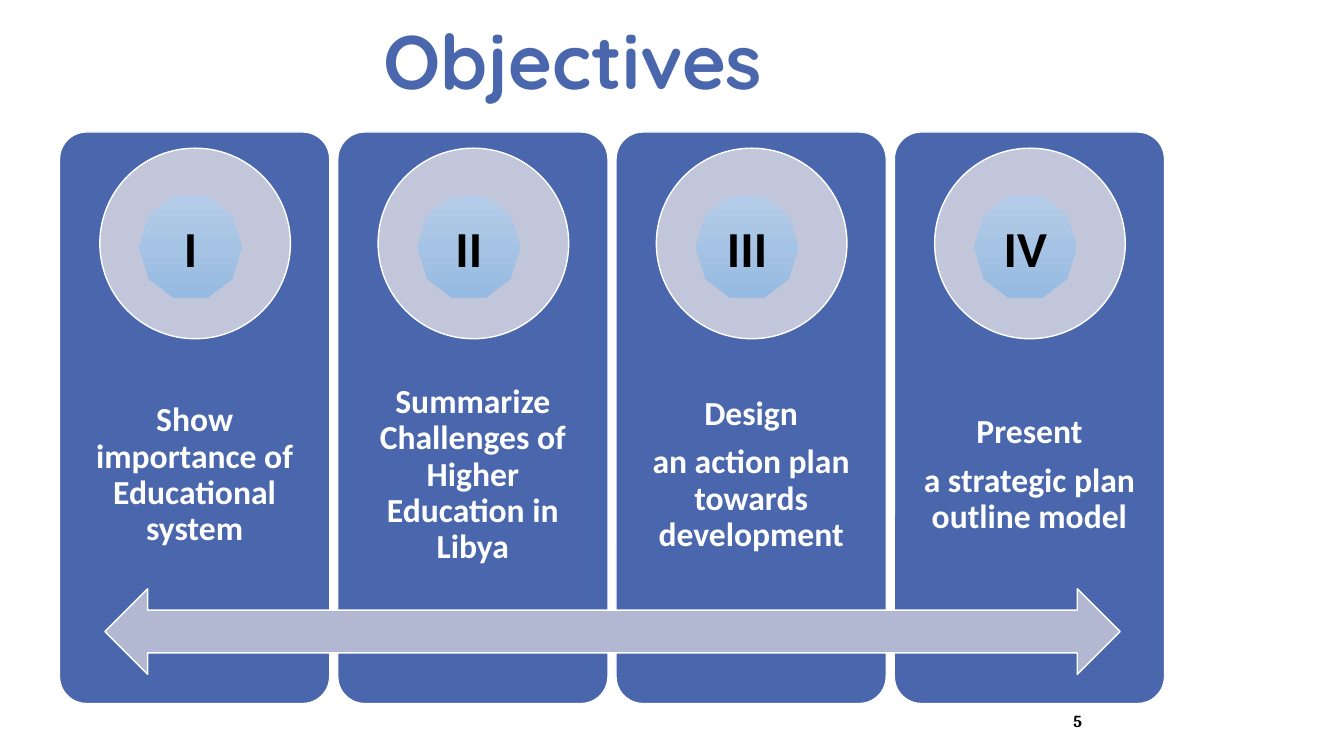
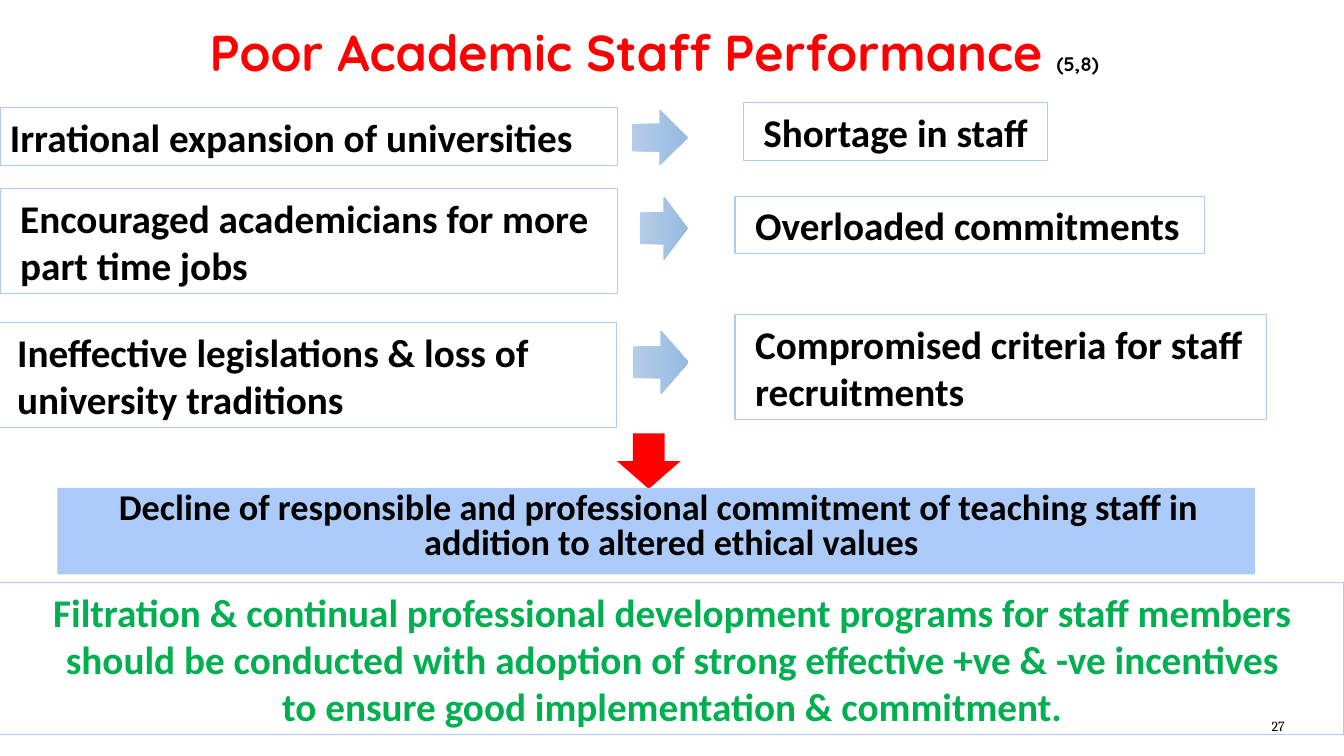
import dataclasses
import typing

import lxml.etree
import pptx
import pptx.dml.color
import pptx.enum.shapes
import pptx.enum.text
import pptx.oxml.ns
import pptx.shapes.autoshape
import pptx.slide
import pptx.text.text
import pptx.util

Inches = pptx.util.Inches
Pt = pptx.util.Pt
Kind = pptx.enum.shapes.MSO_SHAPE
Align = pptx.enum.text.PP_ALIGN
Anchor = pptx.enum.text.MSO_ANCHOR
Shape = pptx.shapes.autoshape.Shape
Slide = pptx.slide.Slide
Para = pptx.text.text._Paragraph

BLUE, PALE, RED, GREEN = "4A66AC", "ACCBF9", "FF0000", "00B050"
BLACK, WHITE = "000000", "FFFFFF"
DISC, BAR = "C1C6DB", "B2B8D2"
SHADE = ("B4CCE7", "96BAE1")
BODY, HEAD, FOOT = "Calibri", "Quicksand", "Cambria"


class Box(typing.NamedTuple):
    x: float
    y: float
    w: float
    h: float


@dataclasses.dataclass
class Goal:
    mark: str
    lines: list[str]


@dataclasses.dataclass
class Note:
    box: Box
    text: str
    inset: float = 0.2
    hang: float = 0  # bullet indent; 0 means no bullet


@dataclasses.dataclass
class Arrow:
    box: Box
    turn: int = 270
    fill: str | tuple[str, str] = SHADE


GOALS = [
    Goal("I", ["Show importance of Educational system"]),
    Goal("II", ["Summarize Challenges of Higher Education in Libya"]),
    Goal("III", ["Design", "an action plan towards development"]),
    Goal("IV", ["Present", "a strategic plan outline model"]),
]
NOTES = [
    Note(Box(0, 1.07, 6.12, 0.57), "Irrational expansion of universities", 0.1, 0.28),
    Note(Box(0, 1.87, 6.12, 1.04), "Encouraged academicians for more part time jobs"),
    Note(Box(-0.21, 3.2, 6.33, 1.04),
         "Ineffective legislations & loss of university traditions", 0.38, 0.37),
    Note(Box(7.37, 1.02, 3.02, 0.57), "Shortage in staff"),
    Note(Box(7.29, 1.95, 4.66, 0.57), "Overloaded commitments"),
    Note(Box(7.29, 3.12, 5.27, 1.04), "Compromised criteria for staff recruitments"),
]
ARROWS = [
    Arrow(Box(6.27, 1.09, 0.55, 0.55)),
    Arrow(Box(6.27, 2.03, 0.63, 0.47)),
    Arrow(Box(6.24, 3.32, 0.63, 0.55)),
    Arrow(Box(6.12, 4.3, 0.63, 0.55), 0, RED),
]


def tint(code: str) -> pptx.dml.color.RGBColor:
    return pptx.dml.color.RGBColor.from_string(code)


def place(box: Box) -> list[pptx.util.Length]:
    return [Inches(side) for side in box]


def draw(slide: Slide, kind: Kind, box: Box,
         fill: str | tuple[str, str] | None = None,
         line: str | None = None, width: float = 1) -> Shape:
    """Add a flat shape; a pair of fill colours makes a top-down gradient."""
    shape = slide.shapes.add_shape(kind, *place(box))
    shape.shadow.inherit = False
    if fill is None:
        shape.fill.background()
    elif isinstance(fill, str):
        shape.fill.solid()
        shape.fill.fore_color.rgb = tint(fill)
    else:
        shape.fill.gradient()
        shape.fill.gradient_angle = 270
        for stop, code in zip(shape.fill.gradient_stops, fill):
            stop.color.rgb = tint(code)
    if line:
        shape.line.color.rgb = tint(line)
        shape.line.width = Pt(width)
    else:
        shape.line.fill.background()
    return shape


def style(para: Para, size: float, color: str, name: str = BODY,
          bold: bool = True) -> None:
    font = para.font
    font.name, font.size, font.bold = name, Pt(size), bold
    font.color.rgb = tint(color)


def write(shape: Shape, lines: list[str], size: float, color: str = BLACK,
          align: Align = Align.CENTER, name: str = BODY,
          bold: bool = True) -> list[Para]:
    frame = shape.text_frame
    frame.word_wrap = True
    frame.vertical_anchor = Anchor.MIDDLE
    frame.text = "\n".join(lines)
    for para in frame.paragraphs:
        para.alignment = align
        style(para, size, color, name, bold)
    return list(frame.paragraphs)


def indent(para: Para, left: float, first: float) -> None:
    props = para._p.get_or_add_pPr()
    props.set("marL", str(Inches(left)))
    props.set("indent", str(Inches(first)))


def bullet(para: Para, hang: float) -> None:
    indent(para, hang, -hang)
    props = para._p.get_or_add_pPr()
    qn = pptx.oxml.ns.qn
    color = lxml.etree.SubElement(props, qn("a:buClr"))
    lxml.etree.SubElement(color, qn("a:srgbClr"), val=RED)
    lxml.etree.SubElement(props, qn("a:buFont"), typeface=BODY)
    lxml.etree.SubElement(props, qn("a:buChar"), char="•")


def start(deck: pptx.presentation.Presentation, box: Box, text: str,
          size: float, color: str) -> Slide:
    """Add a title-only slide with its title styled and placed."""
    slide = deck.slides.add_slide(deck.slide_layouts[5])
    title = slide.shapes.title
    title.left, title.top, title.width, title.height = place(box)
    frame = title.text_frame
    frame.text = text
    frame.vertical_anchor = Anchor.BOTTOM
    para = frame.paragraphs[0]
    para.alignment = Align.LEFT
    para.line_spacing = 0.8
    style(para, size, color, HEAD)
    return slide


def number(slide: Slide, x: float, y: float, text: str, size: float,
           bold: bool) -> None:
    area = slide.shapes.add_textbox(*place(Box(x, y, 1.33, 0.3)))
    write(area, [text], size, BLACK, Align.RIGHT, FOOT, bold)


def panel(slide: Slide, goal: Goal, x: float) -> None:
    card = draw(slide, Kind.ROUNDED_RECTANGLE, Box(x, 1.31, 2.68, 5.67), BLUE, WHITE)
    card.adjustments[0] = 0.1
    area = slide.shapes.add_textbox(*place(Box(x, 3.58, 2.68, 2.27)))
    frame = area.text_frame
    frame.margin_left = frame.margin_right = Inches(0.19)
    frame.margin_top = frame.margin_bottom = Inches(0.19)
    for para in write(area, goal.lines, 24, WHITE):
        para.line_spacing = 0.9
        para.space_after = Pt(8.4)
    draw(slide, Kind.OVAL, Box(x + 0.4, 1.47, 1.89, 1.89), DISC, WHITE)
    badge = draw(slide, Kind.DECAGON, Box(x + 0.79, 1.94, 1.02, 1.02), SHADE)
    write(badge, [goal.mark], 36)


def label(slide: Slide, note: Note) -> None:
    shape = draw(slide, Kind.RECTANGLE, note.box, None, PALE, 0.75)
    frame = shape.text_frame
    frame.margin_left, frame.margin_right = Inches(note.inset), Inches(0.05)
    if note.hang:
        bullet(frame.paragraphs[0], note.hang)
    write(shape, [note.text], 28, align=Align.LEFT)


def goals(deck: pptx.presentation.Presentation) -> None:
    slide = start(deck, Box(3.7, -0.09, 9.5, 1.17), "Objectives", 54, BLUE)
    for i, goal in enumerate(GOALS):
        panel(slide, goal, 0.59 + 2.76 * i)
    draw(slide, Kind.LEFT_RIGHT_ARROW, Box(1.04, 5.84, 10.07, 0.85), BAR, WHITE)
    number(slide, 9.5, 7, "5", 12, True)


def staff(deck: pptx.presentation.Presentation) -> None:
    slide = start(deck, Box(1.98, 0, 9.5, 0.86),
                  "Poor Academic Staff Performance ", 36, RED)
    cite = slide.shapes.title.text_frame.paragraphs[0].add_run()
    cite.text = "(5,8)"
    cite.font.size = Pt(14)
    cite.font.color.rgb = tint(BLACK)

    for note in NOTES:
        label(slide, note)
    for arrow in ARROWS:
        draw(slide, Kind.DOWN_ARROW, arrow.box, arrow.fill).rotation = arrow.turn

    result = draw(slide, Kind.RECTANGLE, Box(0.57, 4.84, 11.88, 0.86), PALE)
    para = write(result, ["Decline of responsible and professional commitment of "
                          "teaching staff in addition to altered ethical values"], 25.9)[0]
    result.text_frame.vertical_anchor = Anchor.TOP
    para.line_spacing = 0.8
    indent(para, 0.3, -0.25)

    advice = draw(slide, Kind.RECTANGLE, Box(0, 5.78, 13.33, 1.51), WHITE, PALE, 0.75)
    write(advice, ["Filtration & continual professional development programs for "
                   "staff members should be conducted with adoption of strong "
                   "effective +ve & -ve incentives\vto ensure good implementation "
                   "& commitment."], 28, GREEN)
    number(slide, 11.51, 7.05, "27", 10, False)


def main() -> None:
    deck = pptx.Presentation()
    deck.slide_width, deck.slide_height = Inches(13.33), Inches(7.5)
    goals(deck)
    staff(deck)
    deck.save("out.pptx")


if __name__ == "__main__":
    main()
